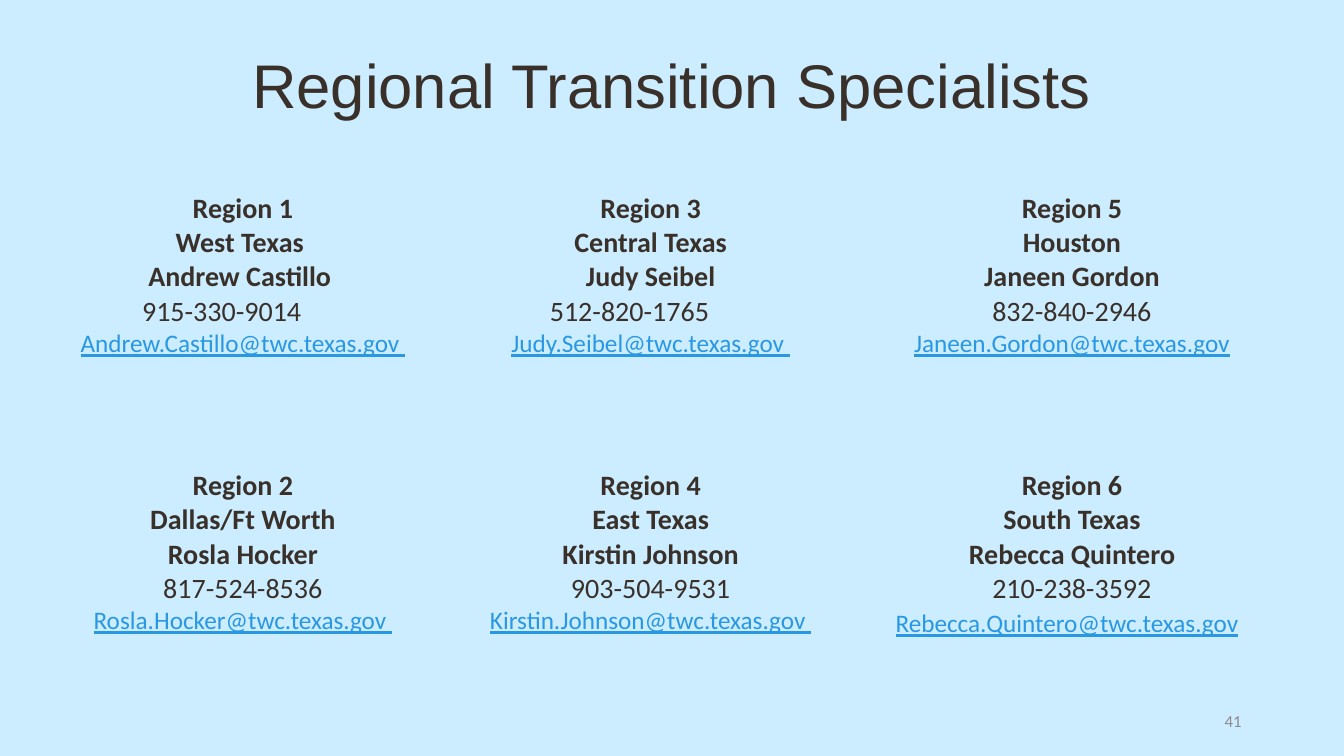
"""Build the Regional Transition Specialists contact slide."""
from dataclasses import dataclass

from pptx import Presentation
from pptx import util as u
from pptx.dml.color import RGBColor
from pptx.enum import text
from pptx.oxml.ns import qn


@dataclass(frozen=True)
class Theme:
    """Colours, fonts and type sizes of the slide."""
    background: str = "CCECFF"
    ink: str = "39302A"
    link: str = "2998E3"
    muted: str = "8C8C8C"
    title_font: str = "Arial"
    body_font: str = "Calibri"
    title_size: int = 44
    body_size: int = 20
    link_size: int = 18
    number_size: int = 12


THEME = Theme()
NO_STYLE_NO_GRID = "{2D5ABB26-0587-4C30-8999-92F81FD0307C}"
COLUMN_WIDTHS = (280.8, 301.7, 300.2)
ROW_HEIGHTS = (198, 166.3)
SPECIALISTS = (
    (
        ("Region 1", "West Texas ", "Andrew Castillo ", "915-330-9014\t",
         "Andrew.Castillo@twc.texas.gov "),
        ("Region 3", "Central Texas", "Judy Seibel", "512-820-1765\t",
         "Judy.Seibel@twc.texas.gov "),
        ("Region 5", "Houston", "Janeen Gordon", "832-840-2946",
         "Janeen.Gordon@twc.texas.gov"),
    ),
    (
        ("Region 2", "Dallas/Ft Worth", " Rosla Hocker ", "817-524-8536",
         "Rosla.Hocker@twc.texas.gov "),
        ("Region 4", "East Texas", "Kirstin Johnson", "903-504-9531",
         "Kirstin.Johnson@twc.texas.gov "),
        ("Region 6", "South Texas", "Rebecca Quintero", "210-238-3592",
         "Rebecca.Quintero@twc.texas.gov\t"),
    ),
)


def set_font(font, size, color, name=THEME.body_font, bold=False, underline=False):
    """Apply one type style to a paragraph or run font."""
    font.name = name
    font.size = u.Pt(size)
    font.bold = bold
    font.underline = underline
    font.color.rgb = RGBColor.from_string(color)


def add_label(s, words, box, align, size, color, name=THEME.body_font):
    """Add a single-line text box, centred vertically."""
    sp = s.shapes.add_textbox(*map(u.Pt, box))
    tf = sp.text_frame
    tf.word_wrap = True
    tf.vertical_anchor = text.MSO_ANCHOR.MIDDLE
    p = tf.paragraphs[0]
    p.text = words
    p.alignment = align
    set_font(p.font, size, color, name)
    return p


def add_email(p, email):
    """Write an underlined address, with any closing tab left plain."""
    address, tab, _ = email.partition("\t")
    r = p.add_run()
    r.text = address
    set_font(r.font, THEME.link_size, THEME.link, underline=True)
    if tab:
        r = p.add_run()
        r.text = tab
        set_font(r.font, THEME.body_size, THEME.ink)


def fill_contact(cell, contact):
    """Write one specialist's region, area, name, phone and email."""
    *heading, phone, email = contact
    cell.fill.background()
    tf = cell.text_frame
    for i, line in enumerate((*heading, phone)):
        p = tf.paragraphs[0] if i == 0 else tf.add_paragraph()
        p.text = line
        p.alignment = text.PP_ALIGN.CENTER
        set_font(p.font, THEME.body_size, THEME.ink, bold=line in heading)
    p = tf.add_paragraph()
    p.alignment = text.PP_ALIGN.CENTER
    add_email(p, email)


def add_contact_table(s, left, top):
    """Add the unruled grid of specialists."""
    frame = s.shapes.add_table(
        len(ROW_HEIGHTS), len(COLUMN_WIDTHS), u.Pt(left), u.Pt(top),
        u.Pt(sum(COLUMN_WIDTHS)), u.Pt(sum(ROW_HEIGHTS)))
    table = frame.table
    table.first_row = table.horz_banding = False
    frame._element.find(".//" + qn("a:tableStyleId")).text = NO_STYLE_NO_GRID
    for column, width in zip(table.columns, COLUMN_WIDTHS):
        column.width = u.Pt(width)
    for row, height, contacts in zip(table.rows, ROW_HEIGHTS, SPECIALISTS):
        row.height = u.Pt(height)
        for cell, contact in zip(row.cells, contacts):
            fill_contact(cell, contact)


def main():
    """Build and save the slide."""
    prs = Presentation()
    prs.slide_width, prs.slide_height = u.Pt(960), u.Pt(540)
    s = prs.slides.add_slide(prs.slide_layouts[6])
    s.background.fill.solid()
    s.background.fill.fore_color.rgb = RGBColor.from_string(THEME.background)
    title = add_label(s, "Regional Transition Specialists", (66, 10.8, 828, 104.4),
                      text.PP_ALIGN.CENTER, THEME.title_size, THEME.ink,
                      THEME.title_font)
    title.line_spacing = 0.9
    add_label(s, "41", (678, 500.5, 216, 28.75), text.PP_ALIGN.RIGHT,
              THEME.number_size, THEME.muted)
    add_contact_table(s, 33.1, 133.2)
    prs.save("out.pptx")


if __name__ == "__main__":
    main()
